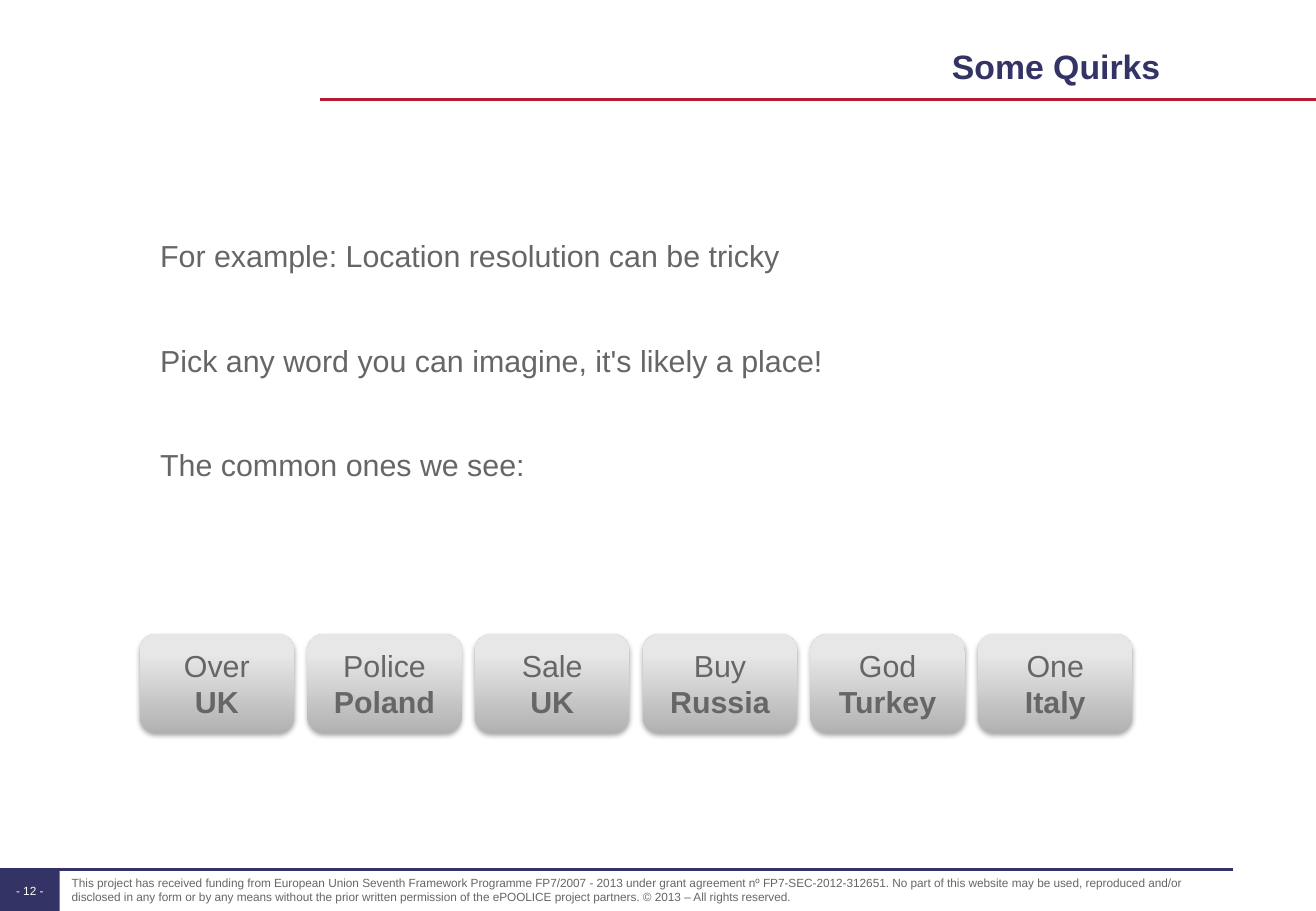
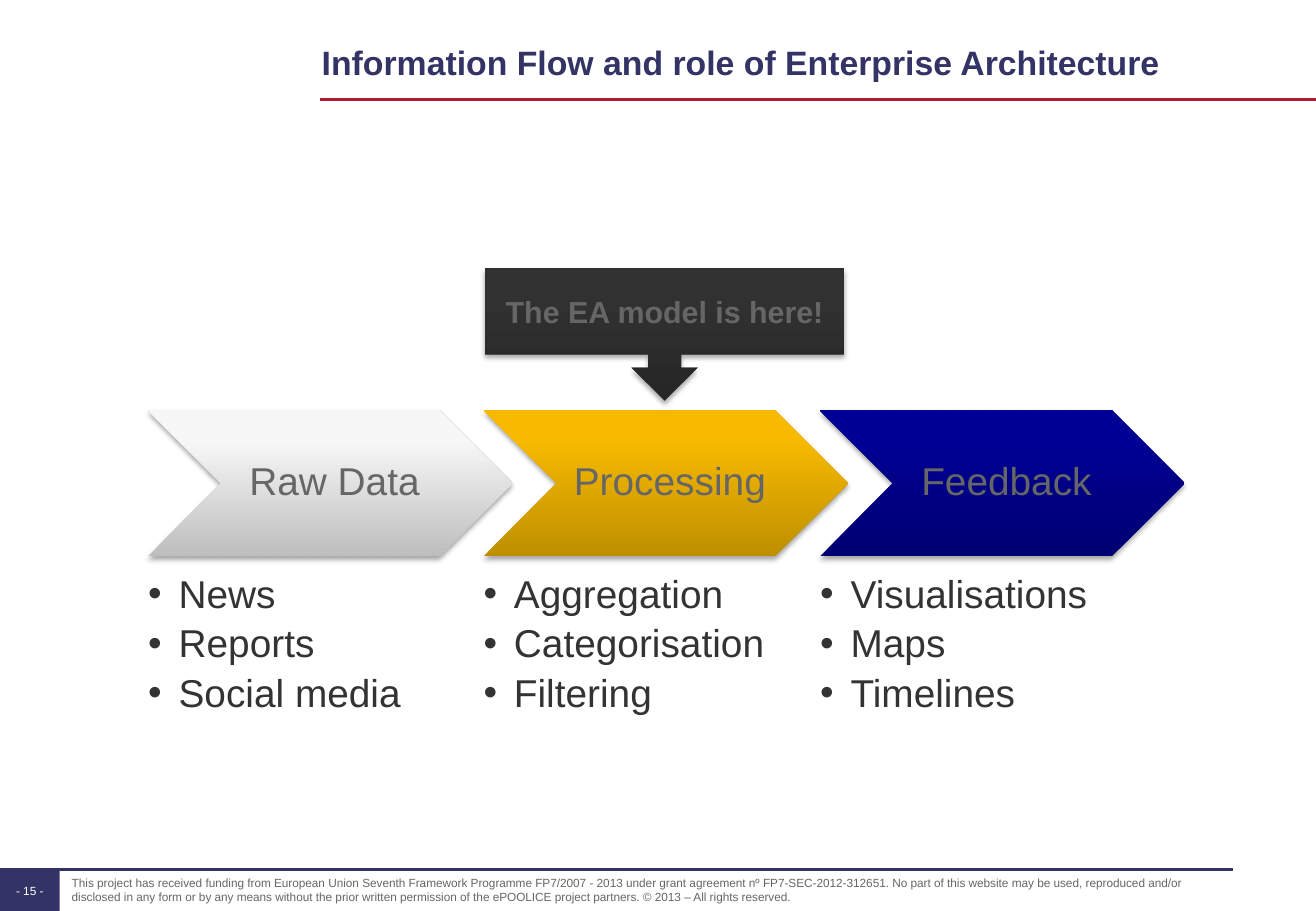
from copy import deepcopy

from lxml.etree import SubElement
from pptx import Presentation
from pptx.dml.color import RGBColor
from pptx.enum.shapes import MSO_CONNECTOR, MSO_SHAPE
from pptx.enum.text import MSO_ANCHOR, PP_ALIGN
from pptx.oxml.ns import qn
from pptx.util import Pt

PX = 9144
WIDTH, HEIGHT = 1083, 750
FONT = "Arial"
COLORS = {
    "navy": "333366", "red": "B31B34", "grey": "666666",
    "dark": "333333", "white": "FFFFFF", "black": "000000",
}
GRADIENTS = {
    "card": ("B2B2B2", "E7E7E7", "E8E8E8"),
    "silver": ("BEBEBE", "F7F7F7", "F8F8F8"),
    "gold": ("BE8F00", "F7BA00", "F8BB00"),
    "blue": ("000072", "000094", "000095"),
    "charcoal": ("262626", "313131", "323232"),
}
STOPS = (0, 0.8, 1)
STANDARD_INSETS = (10, 5, 10, 5)
NO_INSETS = (0, 0, 0, 0)

FOOTER = (
    "This project has received funding from European Union Seventh Framework "
    "Programme FP7/2007 - 2013 under grant agreement nº FP7-SEC-2012-312651. "
    "No part of this website may be used, reproduced and/or disclosed in any form "
    "or by any means without the prior written permission of the ePOOLICE project "
    "partners. © 2013 – All rights reserved."
)
QUIRKS = [
    "For example: Location resolution can be tricky",
    "Pick any word you can imagine, it's likely a place!",
    "The common ones we see:",
]
PLACES = [
    ("Over", "UK"), ("Police", "Poland"), ("Sale", "UK"),
    ("Buy", "Russia"), ("God", "Turkey"), ("One", "Italy"),
]
STAGES = [
    ("Raw Data", "silver", ["News", "Reports", "Social media"]),
    ("Processing", "gold", ["Aggregation", "Categorisation", "Filtering"]),
    ("Feedback", "blue", ["Visualisations", "Maps", "Timelines"]),
]
CALLOUT = "The EA model is here!"

TITLE = {"size": 20, "color": "navy", "bold": True, "alignment": PP_ALIGN.RIGHT,
         "line_spacing": 1.1}
BODY = {"size": 18, "color": "grey", "alignment": PP_ALIGN.JUSTIFY,
        "space_after": Pt(40.6)}
CARD = {"size": 18, "color": "grey", "alignment": PP_ALIGN.CENTER}
CARD_PLACE = {**CARD, "bold": True}
STAGE = {"size": 23, "color": "grey", "alignment": PP_ALIGN.CENTER,
         "line_spacing": 0.9}
BULLET = {"size": 23, "color": "dark", "line_spacing": 0.9,
          "space_after": Pt(4.6), "bullet": True}
NUMBER = {"size": 7, "color": "white", "alignment": PP_ALIGN.CENTER}
SMALL = {"size": 7, "color": "grey"}


def emu(values):
    return [value * PX for value in values]


def rgb(name):
    return RGBColor.from_string(COLORS[name])


def add_bullet(para):
    properties = para._p.get_or_add_pPr()
    properties.set("marL", str(25 * PX))
    properties.set("indent", str(-25 * PX))
    SubElement(properties, qn("a:buFont")).set("typeface", FONT)
    SubElement(properties, qn("a:buChar")).set("char", "•")


def write(shape, lines, insets=STANDARD_INSETS, anchor=MSO_ANCHOR.MIDDLE):
    frame = shape.text_frame
    frame.word_wrap = True
    frame.vertical_anchor = anchor
    for side, inset in zip(("left", "top", "right", "bottom"), insets):
        setattr(frame, f"margin_{side}", inset * PX)
    for index, (text, style) in enumerate(lines):
        para = frame.add_paragraph() if index else frame.paragraphs[0]
        if style.get("bullet"):
            add_bullet(para)
        for name in ("alignment", "line_spacing", "space_after"):
            if name in style:
                setattr(para, name, style[name])
        span = para.add_run()
        span.text = text
        values = {"name": FONT, "size": Pt(style["size"]),
                  "bold": style.get("bold", False)}
        for name, value in values.items():
            setattr(span.font, name, value)
        span.font.color.rgb = rgb(style["color"])


def add_text(page, at, lines, insets=STANDARD_INSETS, anchor=MSO_ANCHOR.TOP):
    write(page.shapes.add_textbox(*emu(at)), lines, insets, anchor)


def add_shape(page, kind, at):
    shape = page.shapes.add_shape(kind, *emu(at))
    shape.shadow.inherit = False
    shape.line.fill.background()
    return shape


def add_glossy(page, kind, at, gradient, lines, insets=STANDARD_INSETS):
    shape = add_shape(page, kind, at)
    shape.fill.gradient()
    shape.fill.gradient_angle = 90
    properties = shape._element.spPr
    stop_list = properties.find(".//" + qn("a:gsLst"))
    stop_list.append(deepcopy(stop_list[0]))
    for stop, position, color in zip(shape.fill.gradient_stops, STOPS,
                                     GRADIENTS[gradient]):
        stop.position = position
        stop.color.rgb = RGBColor.from_string(color)
    shadow = SubElement(properties.find(qn("a:effectLst")), qn("a:outerShdw"),
                        blurRad=str(Pt(3.1)), dist=str(Pt(1.8)),
                        dir="5400000", rotWithShape="0")
    tint = SubElement(shadow, qn("a:srgbClr"), val=COLORS["black"])
    SubElement(tint, qn("a:alpha"), val="35000")
    write(shape, lines, insets)


def add_rule(page, left, right, top, color):
    rule = page.shapes.add_connector(MSO_CONNECTOR.STRAIGHT,
                                     *emu((left, top, right, top)))
    rule.line.color.rgb = rgb(color)
    rule.line.width = Pt(1.5)
    SubElement(rule._element.spPr, qn("a:effectLst"))


def add_page(deck, number, title, title_top):
    page = deck.slides.add_slide(deck.slide_layouts[6])
    tab = add_shape(page, MSO_SHAPE.RECTANGLE, (0, 716, 49, 34))
    tab.fill.solid()
    tab.fill.fore_color.rgb = rgb("navy")
    write(tab, [(f"- {number} -", NUMBER)], NO_INSETS)
    add_rule(page, 0, 1015, 716, "navy")
    add_text(page, (59, 716, 941, 33), [(FOOTER, SMALL)], NO_INSETS,
             MSO_ANCHOR.MIDDLE)
    add_rule(page, 263, WIDTH, 82, "red")
    add_text(page, (122, title_top, 853, 90), [(title, TITLE)], (0, 16, 20, 0))
    return page


def build_quirks(deck):
    page = add_page(deck, 12, "Some Quirks", 18)
    add_text(page, (122, 190, 853, 300), [(text, BODY) for text in QUIRKS])
    for index, (word, place) in enumerate(PLACES):
        add_glossy(page, MSO_SHAPE.ROUNDED_RECTANGLE,
                   (115 + index * 138, 522, 127, 81), "card",
                   [(word, CARD), (place, CARD_PLACE)])


def build_flow(deck):
    page = add_page(deck, 15, "Information Flow and role of Enterprise Architecture",
                    15)
    for index, (stage, gradient, items) in enumerate(STAGES):
        left = 122 + index * 553 // 2
        add_glossy(page, MSO_SHAPE.CHEVRON, (left, 338, 300, 120), gradient,
                   [(stage, STAGE)], (10, 3, 3, 3))
        add_text(page, (left, 473, 240, 110), [(item, BULLET) for item in items],
                 NO_INSETS)
    add_glossy(page, MSO_SHAPE.DOWN_ARROW_CALLOUT, (399, 221, 296, 109), "charcoal",
               [(CALLOUT, CARD_PLACE)])


def main():
    deck = Presentation()
    deck.slide_width, deck.slide_height = emu((WIDTH, HEIGHT))
    build_quirks(deck)
    build_flow(deck)
    deck.save("out.pptx")


if __name__ == "__main__":
    main()
